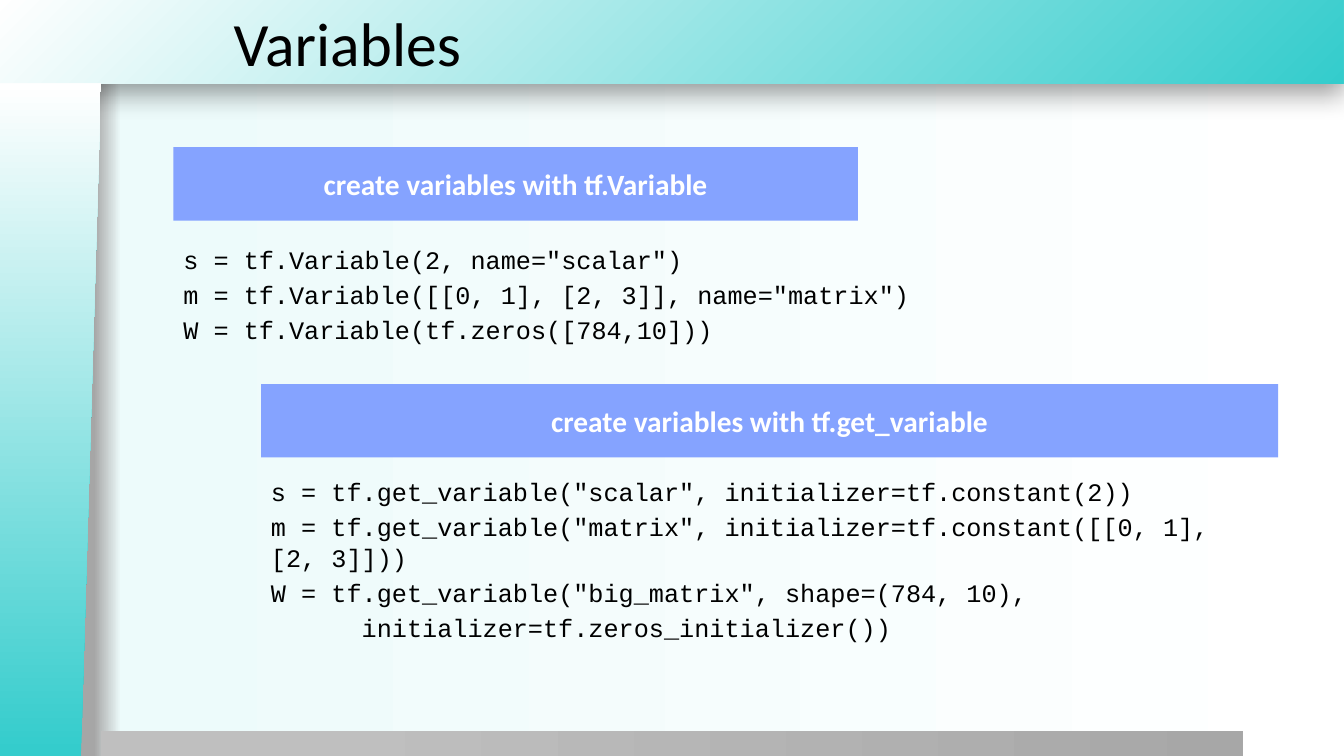
from lxml import etree
from pptx import Presentation
from pptx.dml.color import RGBColor
from pptx.enum.shapes import MSO_SHAPE as SHAPE
from pptx.enum.text import MSO_ANCHOR as ANCHOR, PP_ALIGN as ALIGN
from pptx.oxml import parse_xml
from pptx.oxml.ns import nsdecls, qn
from pptx.util import Cm, Pt

TITLE = "Variables"
# heading, left, heading top, heading width, code top, code height, code lines
SECTIONS = [
    ("create variables with tf.Variable", 4.37, 3.71, 17.25, 6.02, 3.15, [
        's = tf.Variable(2, name="scalar")',
        'm = tf.Variable([[0, 1], [2, 3]], name="matrix")',
        "W = tf.Variable(tf.zeros([784,10]))"]),
    ("create variables with tf.get_variable", 6.58, 9.68, 25.63, 11.86, 5.54, [
        's = tf.get_variable("scalar", initializer=tf.constant(2))',
        'm = tf.get_variable("matrix", initializer=tf.constant([[0, 1], [2, 3]]))',
        'W = tf.get_variable("big_matrix", shape=(784, 10),',
        "initializer=tf.zeros_initializer())"]),
]
CONTINUATION = "initializer="
RIGHT, HEADING_H, BAR_H = 32.21, 1.85, 2.11
TEAL, WHITE, BLACK, BLUE = "34CCCC", "FFFFFF", "000000", "85A3FF"
LINEAR = '<a:lin ang="0" scaled="0"/>'
FROM_CORNER = '<a:path path="circle"><a:fillToRect l="100000" t="100000"/></a:path>'


def color(value):
    return RGBColor.from_string(value)


def set_gradient(element, stops, direction=LINEAR):
    """Replace the first solid fill inside element with a gradient."""
    solid = element.find(".//" + qn("a:solidFill"))
    marks = "".join(f'<a:gs pos="{pos * 1000}"><a:srgbClr val="{value}"/></a:gs>'
                    for pos, value in stops)
    solid.getparent().replace(solid, parse_xml(
        f'<a:gradFill rotWithShape="1" {nsdecls("a")}>'
        f"<a:gsLst>{marks}</a:gsLst>{direction}</a:gradFill>"))


def add_block(s, box, fill, kind=SHAPE.RECTANGLE):
    sp = s.shapes.add_shape(kind, *map(Cm, box))
    sp.shadow.inherit = False
    sp.fill.solid()
    sp.fill.fore_color.rgb = color(fill)
    sp.line.fill.background()
    return sp


def add_shadow(sp):
    effects = sp._element.spPr.find(qn("a:effectLst"))
    shadow = etree.SubElement(effects, qn("a:outerShdw"), blurRad=str(Pt(20)),
                              dist=str(Pt(6)), dir="5400000", algn="t", rotWithShape="0")
    tone = etree.SubElement(shadow, qn("a:srgbClr"), val=BLACK)
    etree.SubElement(tone, qn("a:alpha"), val="40000")


def write(sp, lines, size, font, ink, anchor=ANCHOR.TOP, align=ALIGN.LEFT, bold=False):
    tf = sp.text_frame
    tf.word_wrap = True
    tf.vertical_anchor = anchor
    tf.text = "\n".join(lines)
    for p in tf.paragraphs:
        p.alignment = align
        for r in p.runs:
            r.font.size, r.font.name, r.font.bold = Pt(size), font, bold
            r.font.color.rgb = color(ink)
    return tf.paragraphs


def add_backdrop(s):
    s.background.fill.solid()
    set_gradient(s._element.cSld, [(7, "A6A6A6"), (9, "EDFBFB"), (100, WHITE)])

    bar = add_block(s, (-0.03, 0, 33.88, BAR_H), TEAL)
    set_gradient(bar._element.spPr, [(0, TEAL), (100, WHITE)], FROM_CORNER)
    add_shadow(bar)

    floor = add_block(s, (2.54, 18.42, 28.78, 0.66), "BFBFBF")
    set_gradient(floor._element.spPr, [(20, "BFBFBF"), (100, "A7A7A7")])

    side = add_block(s, (-7.21, 9.32, 16.97, 2.54), TEAL, SHAPE.FLOWCHART_MANUAL_INPUT)
    set_gradient(side._element.spPr, [(1, TEAL), (100, WHITE)])
    side.rotation = 270
    side._element.spPr.xfrm.set("flipV", "1")


def add_section(s, heading, left, top, width, code_top, code_h, lines):
    code = s.shapes.add_textbox(*map(Cm, (left, code_top, RIGHT - left, code_h)))
    for p in write(code, lines, 18, "Courier New", BLACK):
        p.space_before, p.line_spacing = Pt(3), Pt(22)
        if p.text.startswith(CONTINUATION):
            p._p.get_or_add_pPr().set("marL", str(Pt(64.8)))

    band = add_block(s, (left, top, width, HEADING_H), BLUE)
    for p in write(band, [heading], 21, "Calibri", WHITE, ANCHOR.MIDDLE, ALIGN.CENTER, True):
        p.space_before = Pt(4.2)


def main():
    prs = Presentation()
    prs.slide_width, prs.slide_height = Cm(33.87), Cm(19.05)
    s = prs.slides.add_slide(prs.slide_layouts[6])
    add_backdrop(s)
    title = s.shapes.add_textbox(*map(Cm, (5.64, 0, 28.24, BAR_H)))
    write(title, [TITLE], 44, "Calibri", BLACK, ANCHOR.MIDDLE)
    for section in SECTIONS:
        add_section(s, *section)
    prs.save("out.pptx")


if __name__ == "__main__":
    main()
